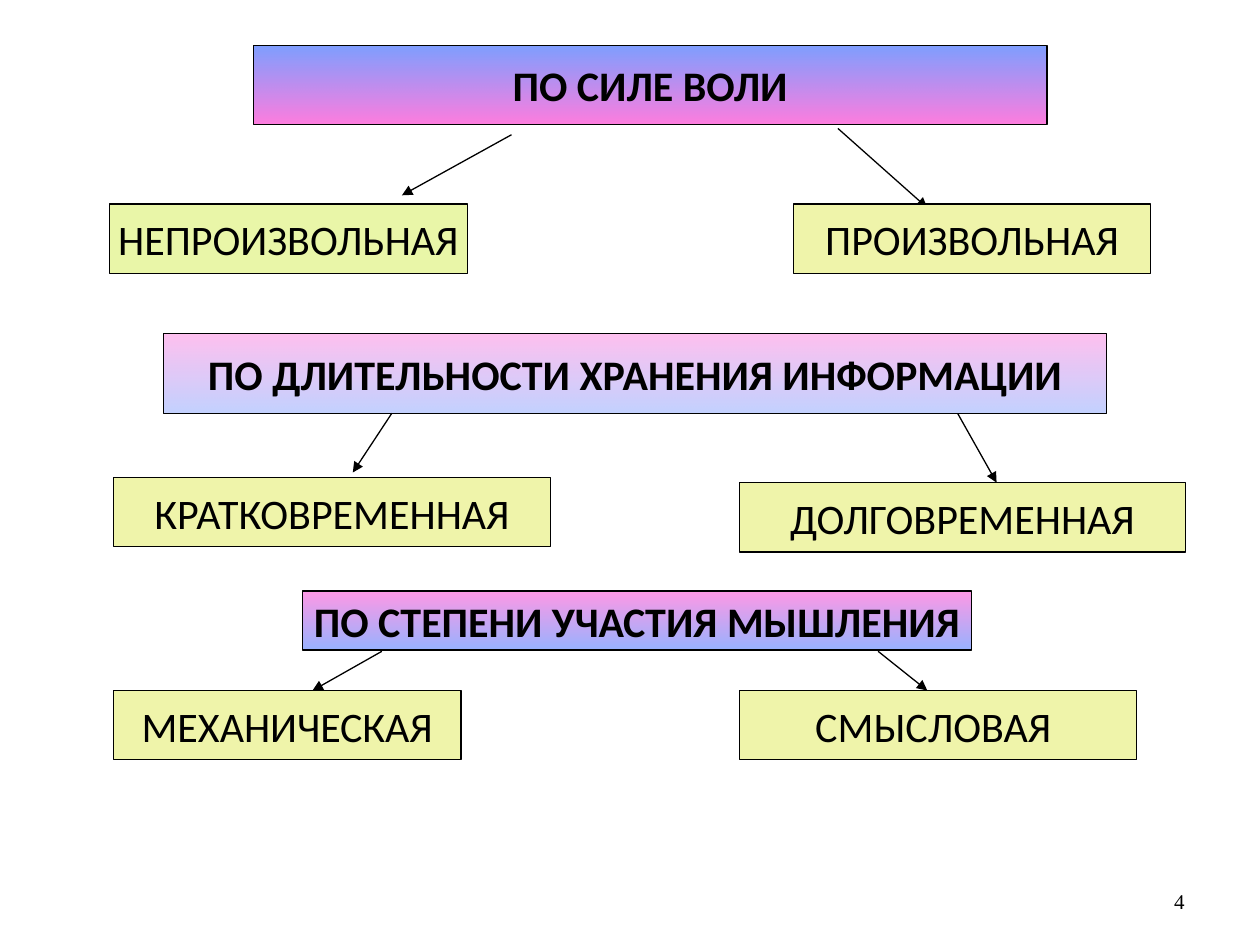
from lxml import etree
from pptx import Presentation
from pptx.dml.color import RGBColor
from pptx.enum.shapes import MSO_CONNECTOR, MSO_SHAPE
from pptx.enum.text import MSO_ANCHOR, PP_ALIGN
from pptx.oxml.ns import qn
from pptx.util import Pt

RECTANGLE = MSO_SHAPE.RECTANGLE
STRAIGHT = MSO_CONNECTOR.STRAIGHT
MIDDLE = MSO_ANCHOR.MIDDLE
CENTER = PP_ALIGN.CENTER
RIGHT = PP_ALIGN.RIGHT

BLACK = "000000"
BLUE = "3366FF"
PINK = "FF33CC"
LIME = "E9F6A8"
YELLOW = "EFF4AA"
LINE_WIDTH = 0.75
KIND_HEIGHT = 39.6

CRITERIA = [
    {
        "title": ("ПО СИЛЕ ВОЛИ", (144.7, 25.9, 453.6, 45.4)),
        "stops": [(BLUE, 63), (PINK, 64)],
        "arrows": [(292.3, 77, 229.7, 111.6), (478.8, 73.4, 529.9, 118.8)],
        "kinds": [("НЕПРОИЗВОЛЬНАЯ", 62.6, 116.6, 204.5, LIME),
                  ("ПРОИЗВОЛЬНАЯ", 453.6, 116.6, 203.8, YELLOW)],
    },
    {
        "title": ("ПО ДЛИТЕЛЬНОСТИ ХРАНЕНИЯ ИНФОРМАЦИИ", (93.6, 190.8, 538.6, 45.4)),
        "stops": [(PINK, 31), (BLUE, 30)],
        "arrows": [(223.9, 236.2, 201.6, 270), (547.2, 236.2, 569.5, 275.8)],
        "kinds": [("КРАТКОВРЕМЕННАЯ", 64.8, 272.9, 249.8, YELLOW),
                  ("ДОЛГОВРЕМЕННАЯ", 422.6, 275.8, 254.9, YELLOW)],
    },
    {
        "title": ("ПО СТЕПЕНИ УЧАСТИЯ МЫШЛЕНИЯ", (172.8, 337.7, 382.3, 33.8)),
        "stops": [(PINK, 49), (BLUE, 49)],
        "arrows": [(218.2, 372.2, 178.6, 394.6), (501.8, 372.2, 529.9, 394.6)],
        "kinds": [("МЕХАНИЧЕСКАЯ", 64.8, 394.6, 198.7, YELLOW),
                  ("СМЫСЛОВАЯ ", 422.6, 394.6, 226.8, YELLOW)],
    },
]


def color(value):
    return RGBColor.from_string(value)


def points(values):
    return [Pt(value) for value in values]


def write(box, text, size=24, font="Calibri", align=CENTER, bold=False):
    frame = box.text_frame
    frame.vertical_anchor = MIDDLE
    para = frame.paragraphs[0]
    para.alignment = align
    span = para.add_run()
    span.text = text
    span.font.name = font
    span.font.size = Pt(size)
    span.font.bold = bold
    span.font.color.rgb = color(BLACK)


def outline(line):
    line.color.rgb = color(BLACK)
    line.width = Pt(LINE_WIDTH)


def add_box(page, text, bounds, bold=False):
    box = page.shapes.add_shape(RECTANGLE, *points(bounds))
    box.shadow.inherit = False
    outline(box.line)
    write(box, text, bold=bold)
    box.text_frame.word_wrap = False
    return box


def add_criterion(page, text, bounds, stops):
    box = add_box(page, text, bounds, bold=True)
    box.fill.gradient()
    box.fill.gradient_angle = 270
    for stop, (value, opacity) in zip(box.fill.gradient_stops, stops):
        stop.color.rgb = color(value)
    gradient = box.element.spPr.find(qn("a:gradFill"))
    for node, (value, opacity) in zip(gradient.iter(qn("a:srgbClr")), stops):
        etree.SubElement(node, qn("a:alpha"), val=str(opacity * 1000))


def add_kind(page, text, left, top, width, value):
    box = add_box(page, text, (left, top, width, KIND_HEIGHT))
    box.fill.solid()
    box.fill.fore_color.rgb = color(value)


def add_arrow(page, ends):
    arrow = page.shapes.add_connector(STRAIGHT, *points(ends))
    outline(arrow.line)
    properties = arrow.element.spPr
    etree.SubElement(properties.find(qn("a:ln")), qn("a:tailEnd"), type="triangle")
    etree.SubElement(properties, qn("a:effectLst"))


def add_page_number(page, text):
    box = page.shapes.add_textbox(*points((516.2, 500.4, 167.8, 28.8)))
    box.text_frame.word_wrap = True
    write(box, text, size=12, font="Times New Roman", align=RIGHT)


def main():
    deck = Presentation()
    deck.slide_width, deck.slide_height = points((720, 540))
    page = deck.slides.add_slide(deck.slide_layouts[6])
    add_page_number(page, "4")
    for criterion in CRITERIA:
        text, bounds = criterion["title"]
        add_criterion(page, text, bounds, criterion["stops"])
        for ends in criterion["arrows"]:
            add_arrow(page, ends)
        for kind in criterion["kinds"]:
            add_kind(page, *kind)
    deck.save("out.pptx")


if __name__ == "__main__":
    main()
